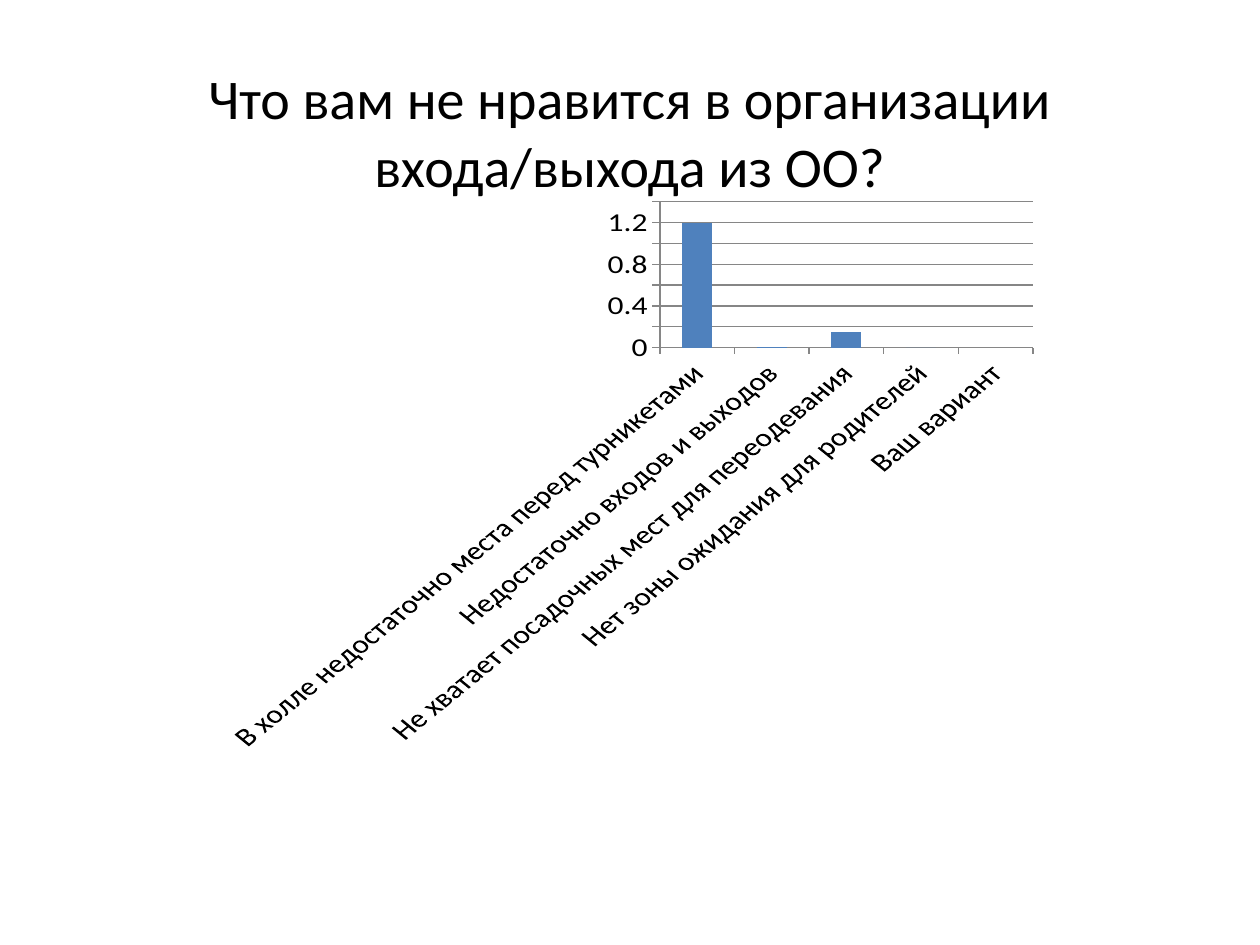
import pptx
import pptx.chart.data
import pptx.dml.color
import pptx.enum.chart
import pptx.enum.text
import pptx.util

Inches = pptx.util.Inches
Pt = pptx.util.Pt
RGBColor = pptx.dml.color.RGBColor
TickMark = pptx.enum.chart.XL_TICK_MARK

THEME = {
    "font": "Calibri",
    "title_size": Pt(32),
    "chart_size": Pt(18),
    "line_width": Pt(0.75),
    "text": RGBColor.from_string("000000"),
    "bar": RGBColor.from_string("4F81BD"),
    "line": RGBColor.from_string("868686"),
}
TITLE = "Что вам не нравится в организации входа/выхода из ОО?"
ANSWERS = {
    "В холле недостаточно места перед турникетами": 1.2,
    "Недостаточно входов и выходов": 0.01,
    "Не хватает посадочных мест для переодевания": 0.15,
    "Нет зоны ожидания для родителей": 0,
    "Ваш вариант": None,
}


def apply_format(target, values):
    for name, value in values.items():
        setattr(target, name, value)


def style_font(font, size):
    apply_format(font, {"name": THEME["font"], "size": size, "bold": False})
    font.color.rgb = THEME["text"]


deck = pptx.Presentation()
apply_format(deck, {"slide_width": Inches(10), "slide_height": Inches(7.5)})
page = deck.slides.add_slide(deck.slide_layouts[6])

box = page.shapes.add_textbox(Inches(0.75), Inches(0.29), Inches(8.5), Inches(1.5))
apply_format(box.text_frame, {
    "word_wrap": True,
    "vertical_anchor": pptx.enum.text.MSO_ANCHOR.MIDDLE,
})
para = box.text_frame.paragraphs[0]
para.alignment = pptx.enum.text.PP_ALIGN.CENTER
span = para.add_run()
span.text = TITLE
style_font(span.font, THEME["title_size"])

answer_data = pptx.chart.data.CategoryChartData(number_format="General")
answer_data.categories = list(ANSWERS)
answer_data.add_series("Series 1", list(ANSWERS.values()))
chart = page.shapes.add_chart(
    pptx.enum.chart.XL_CHART_TYPE.COLUMN_CLUSTERED,
    Inches(1.67), Inches(1.53), Inches(6.67), Inches(4.44), answer_data,
).chart
apply_format(chart, {"has_legend": False, "has_title": False})
style_font(chart.font, THEME["chart_size"])

plot = chart.plots[0]
apply_format(plot, {"gap_width": 150, "vary_by_categories": False})
bars = plot.series[0].format.fill
bars.solid()
bars.fore_color.rgb = THEME["bar"]

apply_format(chart.value_axis, {
    "minimum_scale": 0,
    "maximum_scale": 1.4,
    "major_unit": 0.2,
    "has_major_gridlines": True,
})
apply_format(chart.value_axis.tick_labels, {
    "number_format": "General",
    "number_format_is_linked": False,
})
for axis in (chart.category_axis, chart.value_axis):
    apply_format(axis, {
        "major_tick_mark": TickMark.OUTSIDE,
        "minor_tick_mark": TickMark.NONE,
    })
for part in (chart.category_axis, chart.value_axis, chart.value_axis.major_gridlines):
    part.format.line.width = THEME["line_width"]
    part.format.line.color.rgb = THEME["line"]

deck.save("out.pptx")
